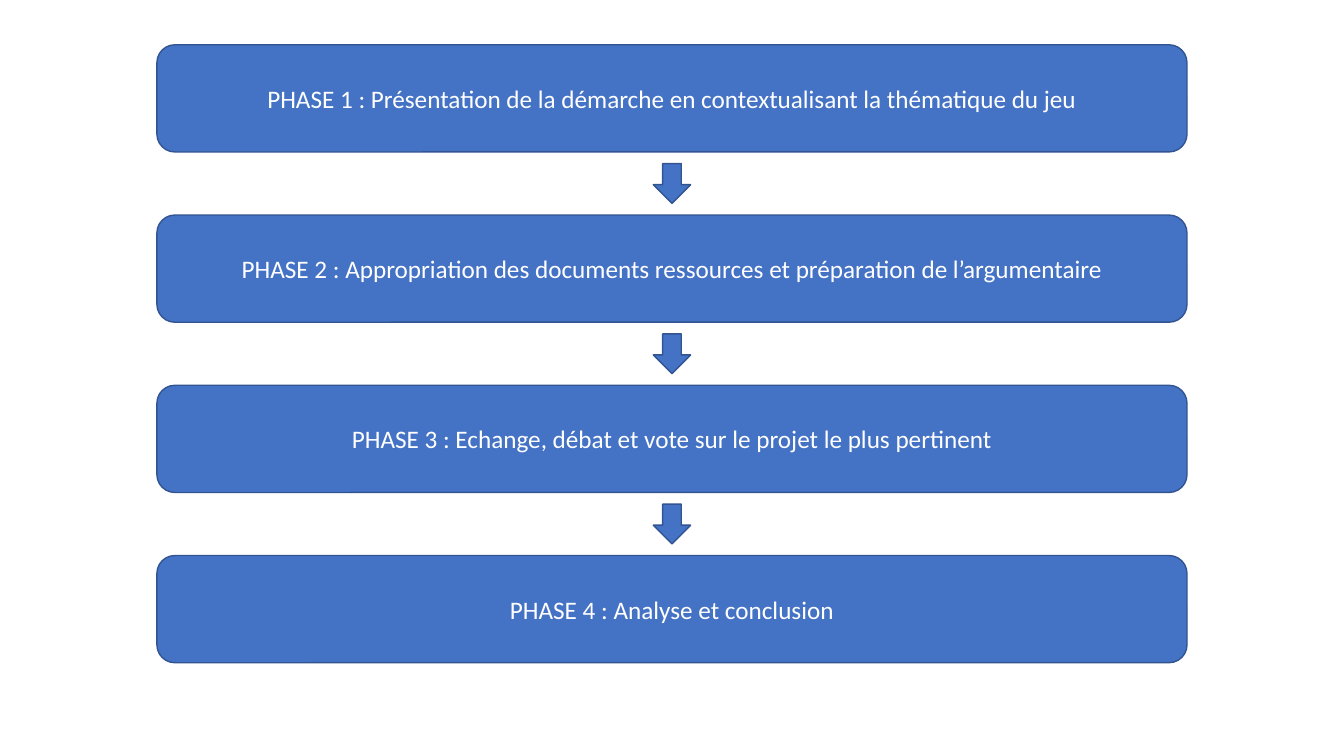
"""Build a slide with four phases stacked in order and linked by arrows."""
from pptx import Presentation
from pptx.dml.color import RGBColor
from pptx.enum.shapes import MSO_SHAPE
from pptx.enum.text import MSO_ANCHOR, PP_ALIGN
from pptx.util import Cm, Pt

COLORS = {"fill": "4472C4", "line": "325491", "text": "FFFFFF"}
WIDTH, HEIGHT = 33.87, 19.05
TOP, STEP = 1.13, 4.29
BOX_W, BOX_H = 25.96, 2.7
ARROW_W, ARROW_H = 0.94, 1
PHASES = [
    "PHASE 1 : Présentation de la démarche en contextualisant la thématique du jeu",
    "PHASE 2 : Appropriation des documents ressources et préparation de l’argumentaire",
    "PHASE 3 : Echange, débat et vote sur le projet le plus pertinent",
    "PHASE 4 : Analyse et conclusion",
]


def color(name):
    """Return the named colour."""
    return RGBColor.from_string(COLORS[name])


def add_form(slide, kind, top, width, height):
    """Add a filled, outlined shape centred across the slide."""
    left = (WIDTH - width) / 2
    form = slide.shapes.add_shape(kind, Cm(left), Cm(top), Cm(width), Cm(height))
    form.shadow.inherit = False
    form.fill.solid()
    form.fill.fore_color.rgb = color("fill")
    form.line.color.rgb = color("line")
    form.line.width = Pt(1)
    return form


def add_phase(slide, top, text):
    """Add a rounded box with its phase text."""
    box = add_form(slide, MSO_SHAPE.ROUNDED_RECTANGLE, top, BOX_W, BOX_H)
    frame = box.text_frame
    frame.word_wrap = True
    frame.vertical_anchor = MSO_ANCHOR.MIDDLE
    para = frame.paragraphs[0]
    para.text = text
    para.alignment = PP_ALIGN.CENTER
    para.font.name = "Calibri"
    para.font.size = Pt(18)
    para.font.color.rgb = color("text")


def add_arrow(slide, top):
    """Add a down arrow in the middle of the gap that starts at top."""
    start = top + (STEP - BOX_H - ARROW_H) / 2
    add_form(slide, MSO_SHAPE.DOWN_ARROW, start, ARROW_W, ARROW_H)


def main():
    """Build and save the slide."""
    deck = Presentation()
    deck.slide_width, deck.slide_height = Cm(WIDTH), Cm(HEIGHT)
    slide = deck.slides.add_slide(deck.slide_layouts[6])
    tops = [TOP + i * STEP for i in range(len(PHASES))]
    for top, text in zip(tops, PHASES):
        add_phase(slide, top, text)
    for top in tops[:-1]:
        add_arrow(slide, top + BOX_H)
    deck.save("out.pptx")


if __name__ == "__main__":
    main()
